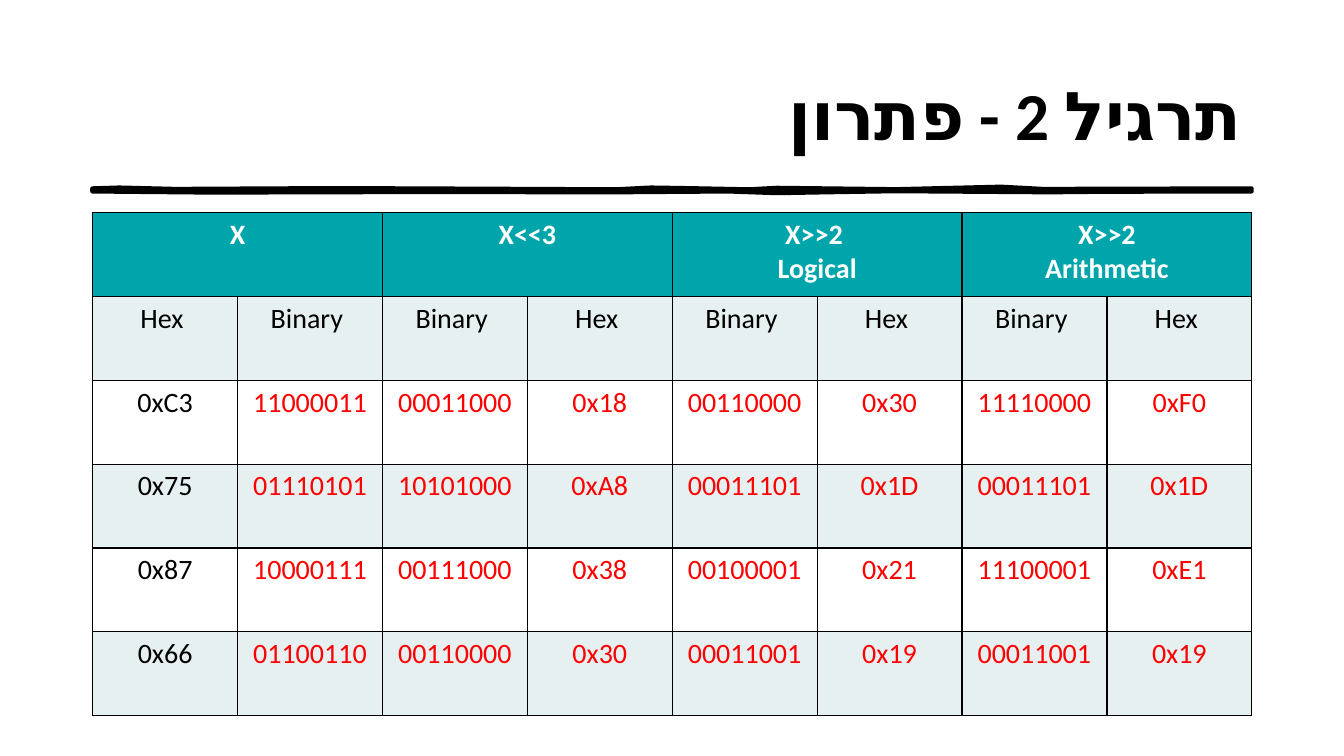
from pptx import Presentation
from pptx.dml.color import RGBColor
from pptx.enum.text import MSO_ANCHOR, PP_ALIGN
from pptx.oxml.ns import qn
from pptx.util import Pt
from lxml import etree

CENTER, RIGHT = PP_ALIGN.CENTER, PP_ALIGN.RIGHT
MIDDLE = MSO_ANCHOR.MIDDLE
FONT = "Calibri"
BLACK, WHITE, RED = "000000", "FFFFFF", "FF0000"
TEAL, PALE = "00A5AB", "E7F0F1"

# Content
TITLE = "תרגיל 2 - פתרון"
GROUPS = ["X", "X<<3", "X>>2 \nLogical", "X>>2\nArithmetic"]
ROWS = [
    ["Hex ", "Binary ", "Binary ", "Hex ", "Binary ", "Hex ", "Binary ", "Hex "],
    ["0xC3", "11000011", "00011000", "0x18", "00110000", "0x30", "11110000", "0xF0"],
    ["0x75", "01110101", "10101000", "0xA8", "00011101", "0x1D", "00011101", "0x1D"],
    ["0x87", "10000111", "00111000", "0x38", "00100001", "0x21", "11100001", "0xE1"],
    ["0x66", "01100110", "00110000", "0x30", "00011001", "0x19", "00011001", "0x19"],
]
# Hand-drawn rule: (x, y) along the upper and lower edge of each stroke
STROKES = [
    ([(66, 134.6), (85, 134), (125, 135), (240, 134.4), (335, 134.8),
      (440, 135.3), (465, 134), (490, 134.4), (535, 135.3), (555, 134.2),
      (640, 135.2), (715, 133.4), (745, 135), (894, 134.6)],
     [(894, 136.8), (790, 137), (750, 137.4), (640, 136.6), (590, 137.4),
      (555, 138), (520, 136.8), (440, 137.4), (300, 137.2), (150, 137.6),
      (66, 136.8)]),
    ([(66, 134.6), (100, 135.4), (125, 134.2), (200, 134.8), (290, 134.2),
      (360, 135), (465, 135.2), (515, 134.2), (555, 135.4), (575, 135.6),
      (620, 134.2), (700, 134.8), (780, 135.4), (820, 133.8), (894, 134.6)],
     [(894, 136.8), (850, 137.4), (810, 136.6), (720, 138.2), (675, 137.2),
      (640, 137.6), (555, 136.8), (530, 136), (465, 136.2), (440, 137.4),
      (300, 136.8), (160, 137.6), (66, 136.8)]),
]
LEFT, WIDTH = 66.24, 828
TITLE_TOP, TITLE_H = 28.8, 104.4
TABLE_TOP, ROW_H = 151.92, 59.88


def rgb(value):
    return RGBColor.from_string(value)


def style(font, **values):
    font.color.rgb = rgb(values.pop("color"))
    for name, value in values.items():
        setattr(font, name, value)


def add_borders(cell):
    tcPr = cell._tc.get_or_add_tcPr()
    for i, side in enumerate(("lnL", "lnR", "lnT", "lnB")):
        ln = etree.Element(qn("a:" + side), w=str(Pt(1)))
        fill = etree.SubElement(ln, qn("a:solidFill"))
        etree.SubElement(fill, qn("a:srgbClr"), val=BLACK)
        tcPr.insert(i, ln)


def fill_cell(cell, text, fill, color, bold):
    cell.fill.solid()
    cell.fill.fore_color.rgb = rgb(fill)
    add_borders(cell)
    cell.text = text
    for p in cell.text_frame.paragraphs:
        p.alignment = CENTER
        for r in p.runs:
            style(r.font, name=FONT, size=Pt(20), bold=bold, color=color)


prs = Presentation()
prs.slide_width, prs.slide_height = Pt(960), Pt(540)
s = prs.slides.add_slide(prs.slide_layouts[5])

# Title, right to left
title = s.shapes.title
box = dict(left=LEFT, top=TITLE_TOP, width=WIDTH, height=TITLE_H)
for name, value in box.items():
    setattr(title, name, Pt(value))
tf = title.text_frame
tf.vertical_anchor = MIDDLE
p = tf.paragraphs[0]
p.alignment = RIGHT
p._p.get_or_add_pPr().set("rtl", "1")
r = p.add_run()
r.text = TITLE
style(r.font, name=FONT, size=Pt(48), bold=True, color=BLACK)
rPr = r._r.get_or_add_rPr()
rPr.set("lang", "he-IL")
etree.SubElement(rPr, qn("a:cs"), typeface=FONT)

# Hand-drawn rule: one stroke outlined, one filled
for i, (upper, lower) in enumerate(STROKES):
    points = [(Pt(x), Pt(y)) for x, y in upper + lower]
    builder = s.shapes.build_freeform(*points[0])
    builder.add_line_segments(points[1:], close=True)
    stroke = builder.convert_to_shape()
    stroke.shadow.inherit = False
    if i == 0:
        stroke.fill.background()
        stroke.line.color.rgb = rgb(BLACK)
        stroke.line.width = Pt(3)
    else:
        stroke.fill.solid()
        stroke.fill.fore_color.rgb = rgb(BLACK)
        stroke.line.fill.background()

# Table: merged group headers above pairs of columns
n_rows, n_cols = len(ROWS) + 1, len(ROWS[0])
table = s.shapes.add_table(n_rows, n_cols, Pt(LEFT), Pt(TABLE_TOP),
                           Pt(WIDTH), Pt(ROW_H * n_rows)).table
for col in table.columns:
    col.width = Pt(WIDTH / n_cols)
for row in table.rows:
    row.height = Pt(ROW_H)
for i, text in enumerate(GROUPS):
    first, second = table.cell(0, 2 * i), table.cell(0, 2 * i + 1)
    first.merge(second)
    fill_cell(first, text, TEAL, WHITE, True)
    add_borders(second)
for i, values in enumerate(ROWS):
    for j, text in enumerate(values):
        fill_cell(table.cell(i + 1, j), text, WHITE if i % 2 else PALE,
                  RED if i and j else BLACK, False)

prs.save("out.pptx")
